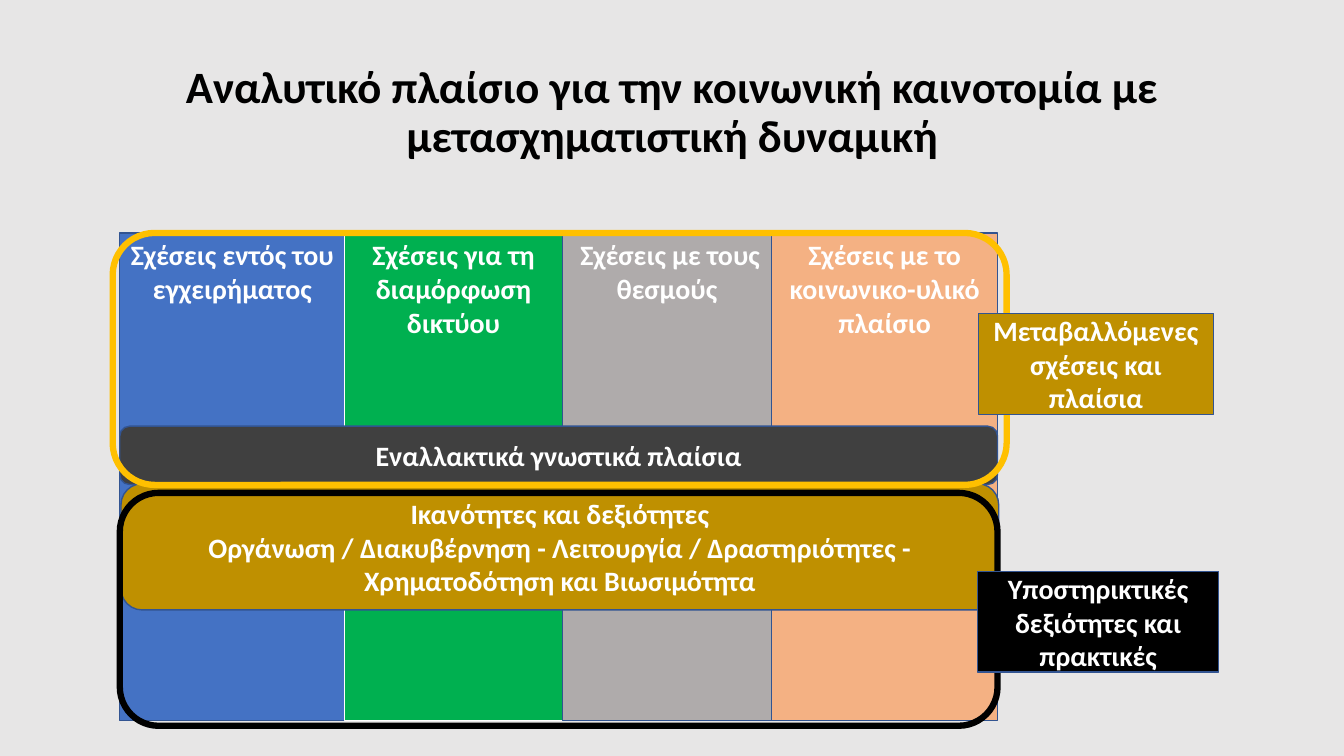
from itertools import accumulate

from pptx import Presentation
from pptx.dml.color import RGBColor
from pptx.enum.shapes import MSO_SHAPE
from pptx.enum.text import MSO_ANCHOR, PP_ALIGN
from pptx.util import Cm, Pt

TITLE = "Αναλυτικό πλαίσιο για την κοινωνική καινοτομία με μετασχηματιστική δυναμική"
COLUMNS = [
    ("Σχέσεις εντός του εγχειρήματος", 5.67, "blue", "outline"),
    ("Σχέσεις για τη διαμόρφωση δικτύου", 5.48, "green", "white"),
    (" Σχέσεις με τους θεσμούς", 5.28, "gray", "outline"),
    ("Σχέσεις με το κοινωνικο-υλικό πλαίσιο", 5.69, "peach", "outline"),
]
BANDS = [
    (["Εναλλακτικά γνωστικά πλαίσια"], (3.02, 10.74, 22.12, 1.47), "charcoal"),
    (
        [
            "Ικανότητες και δεξιότητες",
            "Οργάνωση / Διακυβέρνηση - Λειτουργία / Δραστηριότητες - Χρηματοδότηση και Βιωσιμότητα",
        ],
        (3.05, 12.19, 22.12, 3.18),
        "ochre",
    ),
]
FRAMES = [
    ((2.84, 5.87, 22.53, 6.35), "amber"),
    ((3.02, 12.42, 22.12, 5.87), "black"),
]
LABELS = [
    ("Μεταβαλλόμενες σχέσεις και πλαίσια", (24.66, 7.9, 5.92, 2.54), "ochre"),
    ("Υποστηρικτικές δεξιότητες και πρακτικές", (24.64, 14.4, 6.07, 2.54), "black"),
]
COLORS = {
    "background": "E7E6E6",
    "blue": "4472C4",
    "green": "00B050",
    "gray": "AFABAB",
    "peach": "F4B183",
    "charcoal": "404040",
    "ochre": "BF9000",
    "amber": "FFC000",
    "black": "000000",
    "white": "FFFFFF",
    "outline": "325491",
}
FONT = "Calibri"
COLUMNS_LEFT, COLUMNS_TOP, COLUMNS_HEIGHT = 3.02, 5.87, 12.29


def color(name):
    return RGBColor.from_string(COLORS[name])


def write(text_frame, lines, size, font_color, anchor):
    text_frame.word_wrap = True
    text_frame.vertical_anchor = anchor
    for index, line in enumerate(lines):
        paragraph = text_frame.add_paragraph() if index else text_frame.paragraphs[0]
        paragraph.alignment = PP_ALIGN.CENTER
        run = paragraph.add_run()
        run.text = line
        run.font.name = FONT
        run.font.size = Pt(size)
        run.font.bold = True
        run.font.color.rgb = color(font_color)


def add_box(slide, kind, box, fill=None, line="outline", width=1, lines=(), anchor=MSO_ANCHOR.MIDDLE):
    shape = slide.shapes.add_shape(kind, *map(Cm, box))
    shape.shadow.inherit = False
    if fill:
        shape.fill.solid()
        shape.fill.fore_color.rgb = color(fill)
    else:
        shape.fill.background()
    shape.line.color.rgb = color(line)
    shape.line.width = Pt(width)
    write(shape.text_frame, lines, 20, "white", anchor)


def main():
    presentation = Presentation()
    presentation.slide_width, presentation.slide_height = Cm(33.87), Cm(19.05)
    slide = presentation.slides.add_slide(presentation.slide_layouts[5])
    slide.background.fill.solid()
    slide.background.fill.fore_color.rgb = color("background")

    title = slide.shapes.title
    title.left, title.top, title.width, title.height = map(Cm, (2.34, 1.02, 29.21, 3.68))
    write(title.text_frame, [TITLE], 32, "black", MSO_ANCHOR.MIDDLE)
    title.text_frame.paragraphs[0].line_spacing = 0.9

    lefts = accumulate((column[1] for column in COLUMNS), initial=COLUMNS_LEFT)
    for left, (text, width, fill, line) in zip(lefts, COLUMNS):
        box = (left, COLUMNS_TOP, width, COLUMNS_HEIGHT)
        add_box(slide, MSO_SHAPE.RECTANGLE, box, fill, line, lines=[text], anchor=MSO_ANCHOR.TOP)
    for lines, box, fill in BANDS:
        add_box(slide, MSO_SHAPE.ROUNDED_RECTANGLE, box, fill, lines=lines)
    for box, line in FRAMES:
        add_box(slide, MSO_SHAPE.ROUNDED_RECTANGLE, box, line=line, width=4.5)
    for text, box, fill in LABELS:
        add_box(slide, MSO_SHAPE.RECTANGLE, box, fill, lines=[text])

    presentation.save("out.pptx")


if __name__ == "__main__":
    main()
